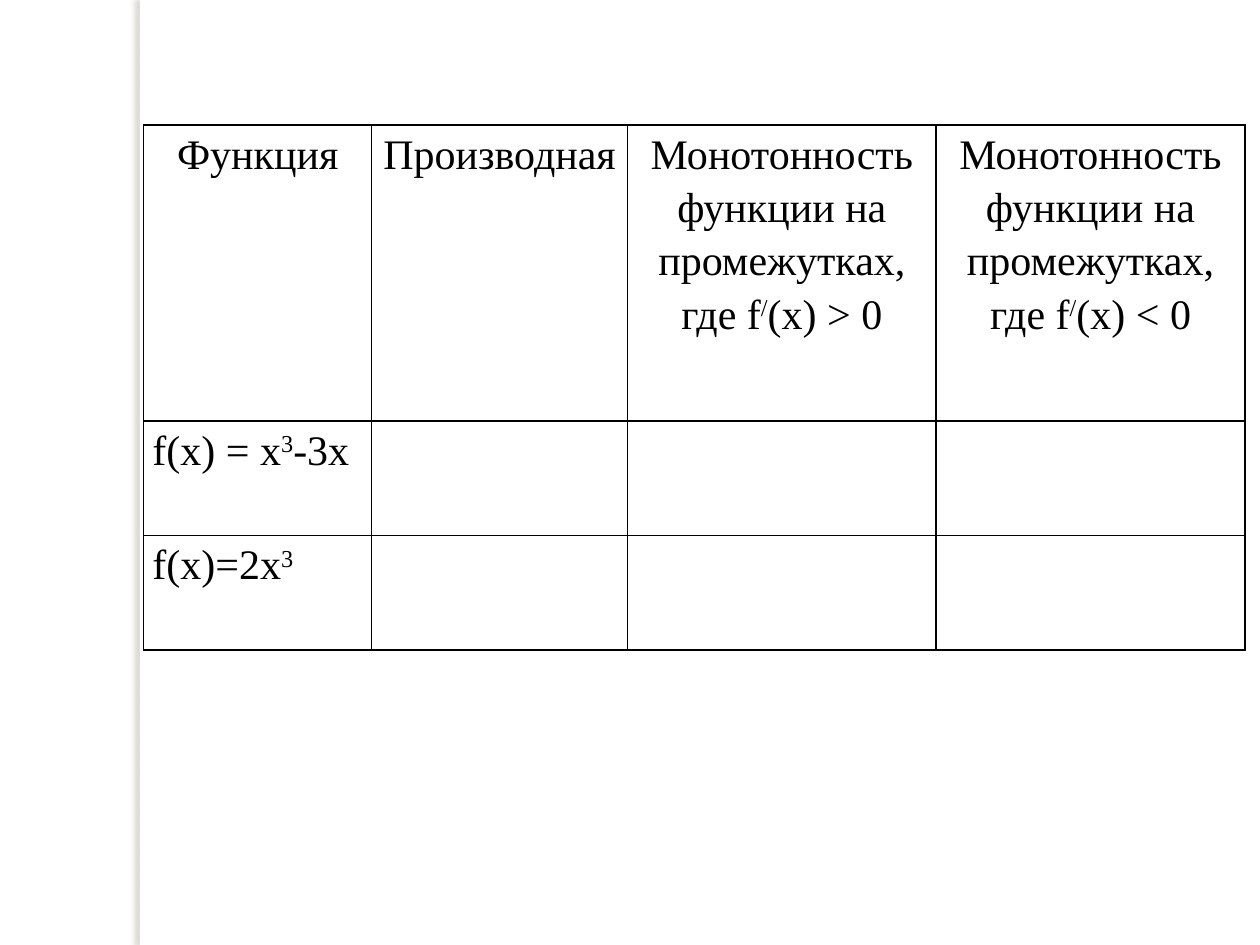
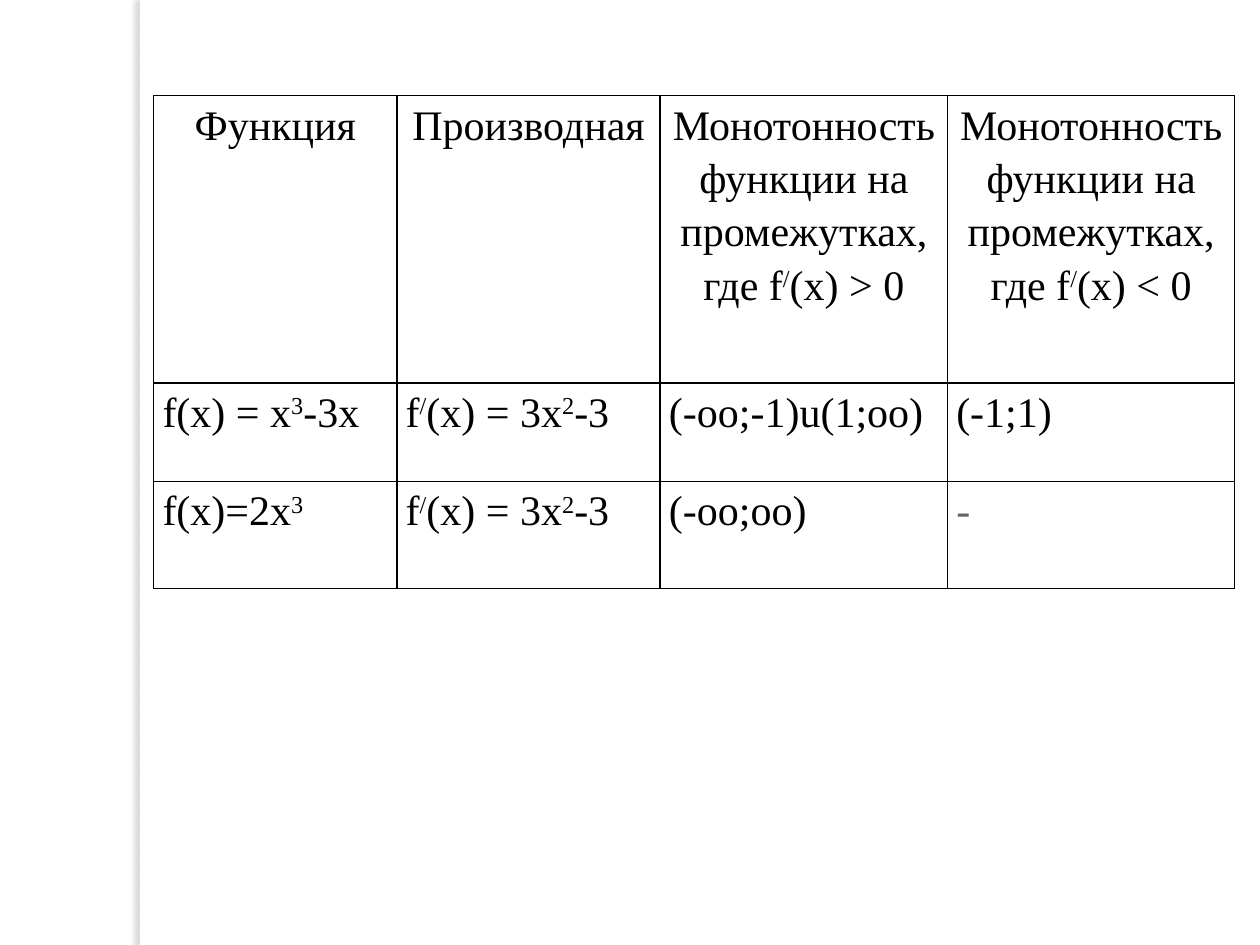
import dataclasses

import pptx
import pptx.dml.color
import pptx.enum.shapes
import pptx.enum.text
import pptx.oxml
import pptx.oxml.ns
import pptx.util

Pt = pptx.util.Pt
ALIGN = pptx.enum.text.PP_ALIGN


@dataclasses.dataclass(frozen=True)
class Theme:
    """Colours, type and line sizes shared by the slides."""
    font: str = "Times New Roman"
    size: float = 24
    lead: float = 1.15
    inset: float = 5.04
    rule: float = 1
    ink: str = "000000"
    dim: str = "666666"
    paper: str = "FFFFFF"
    shade: str = "736F63"


THEME = Theme()
WIDE, HIGH = 720, 540
HEAD = [
    "Функция",
    "Производная",
    "Монотонность функции на промежутках, где f^/^(x) > 0",
    "Монотонность функции на промежутках, где f^/^(x) < 0",
]
CUBIC, DOUBLE = "f(x) = х^3^-3х", "f(x)=2x^3"
SLOPE = "f^/^(x) = 3х^2^-3"


def rgb(code):
    """Turn a hex code into a colour."""
    return pptx.dml.color.RGBColor.from_string(code)


def make(text):
    """Parse a piece of drawing XML."""
    space = pptx.oxml.ns.nsdecls("a")
    return pptx.oxml.parse_xml(text.replace(" NS", " " + space, 1))


def add_band(slide):
    """Draw the side strip with its soft shadow on the left."""
    kind = pptx.enum.shapes.MSO_SHAPE.RECTANGLE
    band = slide.shapes.add_shape(kind, Pt(79.92), 0, Pt(5.76), Pt(HIGH))
    band.fill.solid()
    band.fill.fore_color.rgb = rgb(THEME.paper)
    band.line.fill.background()
    band._element.spPr.append(make(
        f'<a:effectLst NS><a:outerShdw blurRad="{Pt(3)}" dist="{Pt(3)}" '
        f'dir="10800000" rotWithShape="0"><a:srgbClr val="{THEME.shade}">'
        '<a:alpha val="25000"/></a:srgbClr></a:outerShdw></a:effectLst>'))


def add_runs(para, text, tint):
    """Add runs, raising each part that stands between carets."""
    for place, part in enumerate(text.split("^")):
        if not part:
            continue
        run = para.add_run()
        run.text = part
        run.font.name = THEME.font
        run.font.size = Pt(THEME.size)
        run.font.color.rgb = rgb(tint)
        if place % 2:
            run._r.get_or_add_rPr().set("baseline", "30000")


def frame(cell):
    """Give a cell thin borders, side insets and no fill."""
    props = cell._tc.get_or_add_tcPr()
    for side in "LRTB":
        props.append(make(
            f'<a:ln{side} NS w="{Pt(THEME.rule)}"><a:solidFill>'
            f'<a:srgbClr val="{THEME.ink}"/></a:solidFill></a:ln{side}>'))
    cell.fill.background()
    cell.margin_left = cell.margin_right = Pt(THEME.inset)
    cell.margin_top = cell.margin_bottom = 0


def fill_cell(cell, text, align):
    """Format a cell and write its text."""
    frame(cell)
    para = cell.text_frame.paragraphs[0]
    para.alignment = align
    para.line_spacing = THEME.lead
    add_runs(para, text, THEME.dim if text == "-" else THEME.ink)


def add_grid(slide, left, top, widths, heights, body):
    """Draw the table of functions under the shared header row."""
    rows = [HEAD] + body
    shape = slide.shapes.add_table(
        len(rows), len(HEAD), Pt(left), Pt(top),
        Pt(sum(widths)), Pt(sum(heights)))
    grid = shape.table
    grid.first_row = grid.horz_banding = False
    for col, width in zip(grid.columns, widths):
        col.width = Pt(width)
    for row, height in zip(grid.rows, heights):
        row.height = Pt(height)
    for y, texts in enumerate(rows):
        for x, text in enumerate(texts):
            if y == 0:
                align = ALIGN.CENTER
            else:
                align = ALIGN.LEFT if x else ALIGN.JUSTIFY
            fill_cell(grid.cell(y, x), text, align)


def add_page(deck, *grid):
    """Add a slide with the side strip and a table."""
    slide = deck.slides.add_slide(deck.slide_layouts[6])
    slide.background.fill.solid()
    slide.background.fill.fore_color.rgb = rgb(THEME.paper)
    add_band(slide)
    add_grid(slide, *grid)


def main():
    """Build the task slide and the answer slide."""
    deck = pptx.Presentation()
    deck.slide_width, deck.slide_height = Pt(WIDE), Pt(HIGH)
    add_page(deck, 82.08, 71.28,
             [130.32, 146.16, 176.4, 176.4], [169.2, 65.52, 65.52],
             [[CUBIC, "", "", ""], [DOUBLE, "", "", ""]])
    add_page(deck, 87.84, 54.72,
             [138.96, 150.48, 164.16, 164.16], [164.16, 56.16, 61.2],
             [[CUBIC, SLOPE, "(-оо;-1)u(1;оо)", "(-1;1)"],
              [DOUBLE, SLOPE, "(-оо;оо)", "-"]])
    deck.save("out.pptx")


if __name__ == "__main__":
    main()
